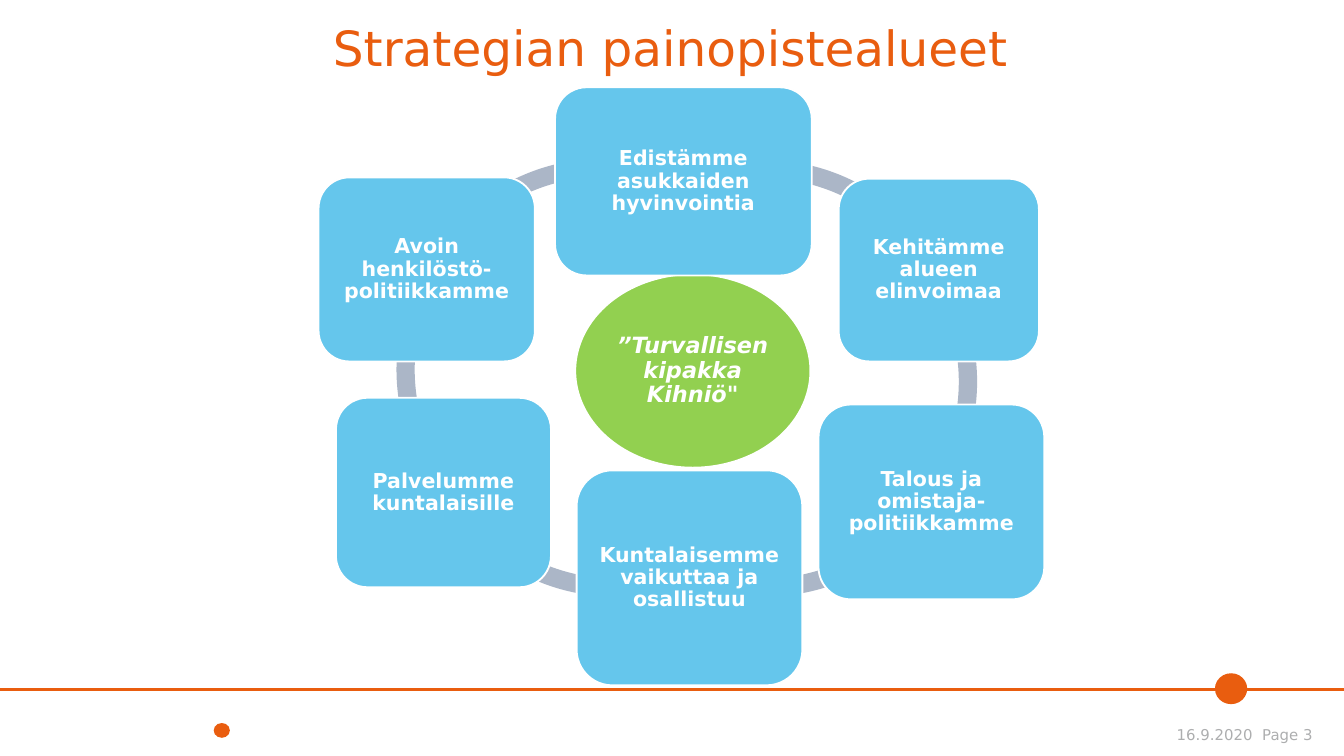
"""Build the slide of strategic focus areas around a central vision."""
from typing import NamedTuple

from lxml.etree import SubElement
from pptx import Presentation
from pptx.dml.color import RGBColor
from pptx.enum.shapes import MSO_CONNECTOR, MSO_SHAPE
from pptx.enum.text import MSO_ANCHOR, MSO_AUTO_SIZE, PP_ALIGN
from pptx.oxml.ns import qn
from pptx.shapes.autoshape import Shape
from pptx.slide import Slide
from pptx.text.text import TextFrame
from pptx.util import Inches, Pt

FONT = "DejaVu Sans"
ORANGE, BLUE, GREEN = "E95D0F", "65C6EC", "92D050"
RING_GREY, FOOTER_GREY, WHITE = "ABB6C7", "ADAEAF", "FFFFFF"
SLIDE_WIDTH = 10
SLIDE_HEIGHT = SLIDE_WIDTH * 9 / 16
ARC_DIAMETER, ARC_THICKNESS = 3.02, 0.045


class Box(NamedTuple):
    left: float
    top: float
    width: float
    height: float


class Arc(NamedTuple):
    left: float
    top: float
    start: float
    end: float


class FocusArea(NamedTuple):
    text: str
    box: Box


class TextStyle(NamedTuple):
    size: float
    color: str
    bold: bool = False
    italic: bool = False
    align: PP_ALIGN = PP_ALIGN.CENTER
    anchor: MSO_ANCHOR = MSO_ANCHOR.MIDDLE
    line_spacing: float = 0.9
    margin: float = 0.02


TITLE_STYLE = TextStyle(26, ORANGE, anchor=MSO_ANCHOR.BOTTOM, margin=0)
FOOTER_STYLE = TextStyle(8, FOOTER_GREY, align=PP_ALIGN.RIGHT,
                         anchor=MSO_ANCHOR.BOTTOM, line_spacing=1, margin=0)
AREA_STYLE = TextStyle(11, WHITE, bold=True)
VISION_STYLE = TextStyle(12, WHITE, bold=True, italic=True)

RING = [
    Arc(2.98, 1.18, 124.63, 176.49),
    Arc(2.95, 1.24, 84.78, 126),
    Arc(3.07, 1.42, 40.88, 89.98),
    Arc(4.18, 1.42, 19.88, 67.38),
    Arc(4.25, 1.33, 195.55, 22.66),
    Arc(4.17, 1.19, 147.84, 199.26),
]
VISION = FocusArea("”Turvallisen kipakka Kihniö\"", Box(4.28, 2.04, 1.75, 1.44))
FOCUS_AREAS = [
    FocusArea("Edistämme asukkaiden hyvinvointia", Box(4.13, 0.65, 1.91, 1.4)),
    FocusArea("Kehitämme alueen elinvoimaa", Box(6.24, 1.33, 1.49, 1.36)),
    FocusArea("Talous ja omistaja-politiikkamme", Box(6.09, 3.01, 1.68, 1.45)),
    FocusArea("Kuntalaisemme vaikuttaa ja osallistuu", Box(4.29, 3.5, 1.68, 1.6)),
    FocusArea("Palvelumme kuntalaisille", Box(2.5, 2.96, 1.6, 1.41)),
    FocusArea("Avoin henkilöstö-politiikkamme", Box(2.37, 1.32, 1.61, 1.37)),
]
FOOTER_DOTS = [Box(9.04, 5.01, 0.24, 0.23), Box(1.59, 5.38, 0.12, 0.11)]


def rgb(color: str) -> RGBColor:
    """Turn a hex string into a colour."""
    return RGBColor.from_string(color)


def write(frame: TextFrame, text: str, style: TextStyle) -> None:
    """Fill a text frame with one styled paragraph."""
    frame.word_wrap = True
    frame.auto_size = MSO_AUTO_SIZE.NONE
    frame.vertical_anchor = style.anchor
    frame.margin_left = frame.margin_right = Inches(style.margin)
    frame.margin_top = frame.margin_bottom = Inches(style.margin)
    paragraph = frame.paragraphs[0]
    paragraph.alignment = style.align
    paragraph.line_spacing = style.line_spacing
    run = paragraph.add_run()
    run.text = text
    run.font.name = FONT
    run.font.size = Pt(style.size)
    run.font.bold = style.bold
    run.font.italic = style.italic
    run.font.color.rgb = rgb(style.color)


def add_figure(slide: Slide, kind: MSO_SHAPE, box: Box, fill: str,
               outline: str = "") -> Shape:
    """Add a flat filled shape, outlined only on request."""
    figure = slide.shapes.add_shape(kind, *map(Inches, box))
    figure.shadow.inherit = False
    figure.fill.solid()
    figure.fill.fore_color.rgb = rgb(fill)
    if outline:
        figure.line.color.rgb = rgb(outline)
        figure.line.width = Pt(1)
    else:
        figure.line.fill.background()
    return figure


def add_area(slide: Slide, kind: MSO_SHAPE, area: FocusArea, fill: str,
             style: TextStyle) -> None:
    """Add a white-edged shape that holds its own text."""
    figure = add_figure(slide, kind, area.box, fill, WHITE)
    write(figure.text_frame, area.text, style)


def add_arc(slide: Slide, arc: Arc) -> None:
    """Add one segment of the ring behind the focus areas."""
    box = Box(arc.left, arc.top, ARC_DIAMETER, ARC_DIAMETER)
    segment = add_figure(slide, MSO_SHAPE.BLOCK_ARC, box, RING_GREY)
    for index, value in enumerate((arc.start, arc.end, ARC_THICKNESS)):
        segment.adjustments[index] = value


def add_title(slide: Slide) -> None:
    """Place and write the title."""
    title = slide.shapes.title
    title.left, title.top = Inches(0.83), Inches(-0.1)
    title.width, title.height = Inches(8.32), Inches(0.67)
    write(title.text_frame, "Strategian painopistealueet", TITLE_STYLE)


def add_footer(slide: Slide) -> None:
    """Add the footer rule, its dots and the date with page number."""
    rule = slide.shapes.add_connector(
        MSO_CONNECTOR.STRAIGHT, Inches(0), Inches(5.13),
        Inches(SLIDE_WIDTH), Inches(5.13))
    rule.line.color.rgb = rgb(ORANGE)
    rule.line.width = Pt(1.5)
    SubElement(rule.element.spPr, qn("a:effectLst"))
    for dot in FOOTER_DOTS:
        add_figure(slide, MSO_SHAPE.OVAL, dot, ORANGE)
    date_and_page = slide.shapes.add_textbox(
        *map(Inches, Box(6.29, 5.33, 3.48, 0.2)))
    write(date_and_page.text_frame, "16.9.2020  Page 3", FOOTER_STYLE)


def main() -> None:
    """Build and save the presentation."""
    presentation = Presentation()
    presentation.slide_width = Inches(SLIDE_WIDTH)
    presentation.slide_height = Inches(SLIDE_HEIGHT)
    slide = presentation.slides.add_slide(presentation.slide_layouts[5])
    add_footer(slide)
    add_title(slide)
    for arc in RING:
        add_arc(slide, arc)
    add_area(slide, MSO_SHAPE.OVAL, VISION, GREEN, VISION_STYLE)
    for area in FOCUS_AREAS:
        add_area(slide, MSO_SHAPE.ROUNDED_RECTANGLE, area, BLUE, AREA_STYLE)
    presentation.save("out.pptx")


if __name__ == "__main__":
    main()
